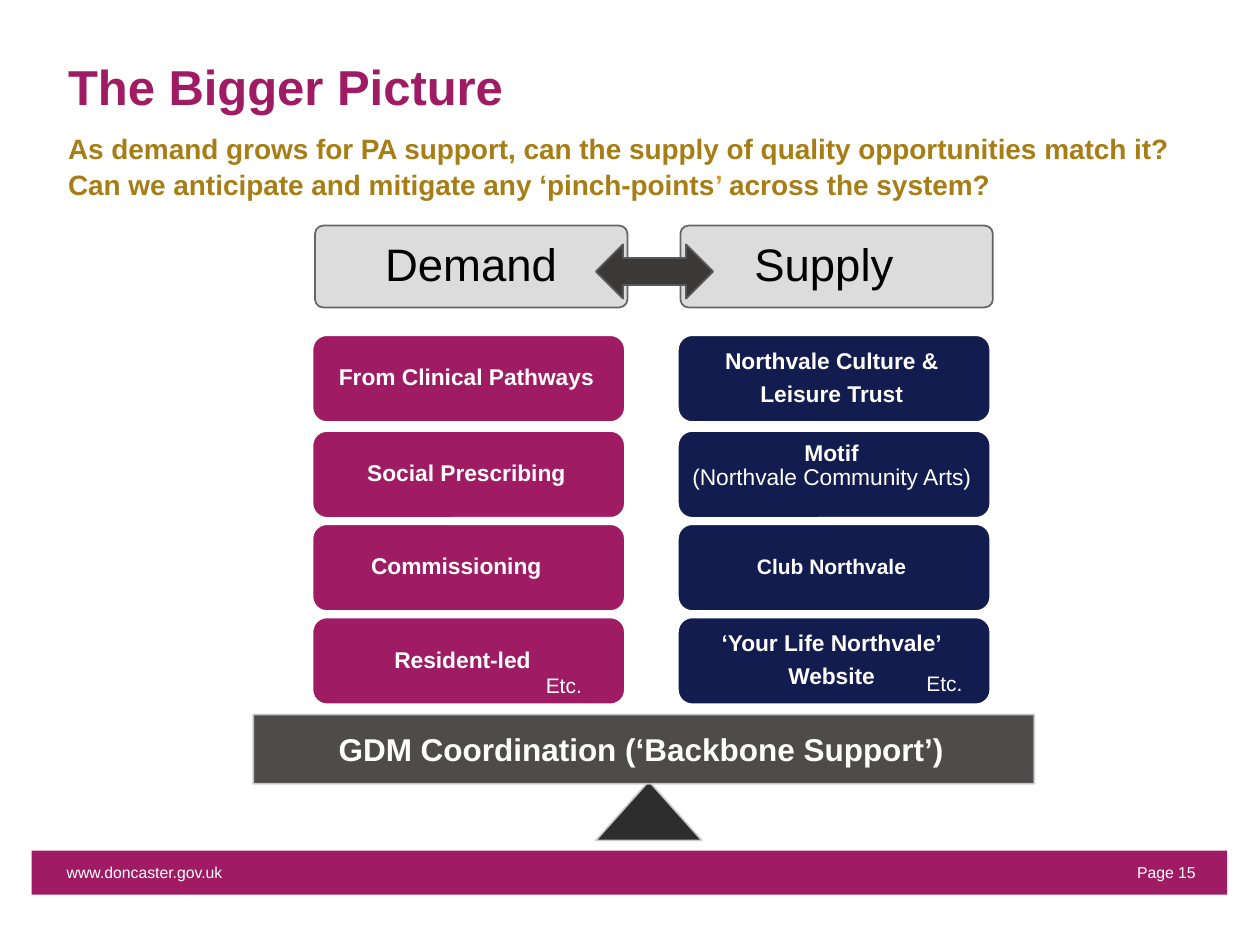
from lxml.etree import SubElement
from pptx import Presentation
from pptx.dml.color import RGBColor
from pptx.enum.shapes import MSO_SHAPE as Shape
from pptx.enum.text import MSO_ANCHOR as Anchor, MSO_AUTO_SIZE as AutoSize, PP_ALIGN as Align
from pptx.oxml.ns import qn
from pptx.util import Inches, Pt

MAGENTA = RGBColor(0x9F, 0x1C, 0x64)
NAVY = RGBColor(0x13, 0x1C, 0x4E)
GOLD = RGBColor(0xA7, 0x7D, 0x15)
AMBER = RGBColor(0xD8, 0x9A, 0x28)
SILVER = RGBColor(0xD9, 0xD9, 0xD9)
PALE = RGBColor(0xCC, 0xCD, 0xD0)
SLATE = RGBColor(0x56, 0x57, 0x59)
CHARCOAL = RGBColor(0x3B, 0x38, 0x38)
INK = RGBColor(0x18, 0x17, 0x17)
BLACK = RGBColor(0, 0, 0)
WHITE = RGBColor(0xFF, 0xFF, 0xFF)

# Content: a line is a list of (text, format changes)
TITLE = "The Bigger Picture"
QUESTIONS = [
    [("As demand grows for PA support, can the supply of quality opportunities match it?", {})],
    [("Can we anticipate and mitigate any ‘pinch-points", {}), ("’ ", {"color": AMBER}),
     ("across the system?", {})],
]
# Each card: lines, then how far its text sits left of centre, then format changes
COLUMNS = [
    {"heading": "Demand", "heading_shift": 0, "left": 2.48, "fill": MAGENTA, "etc": (4.22, 5.33),
     "cards": [
         ([[("From Clinical Pathways", {})]], 0.02, {}),
         ([[("Social Prescribing", {})]], 0.02, {}),
         ([[("Commissioning", {})]], 0.1, {}),
         ([[("Resident-led", {})]], 0.05, {}),
     ]},
    {"heading": "Supply", "heading_shift": 0.1, "left": 5.38, "fill": NAVY, "etc": (7.24, 5.31),
     "cards": [
         ([[("Northvale Culture &", {})], [("Leisure Trust", {})]], 0.02, {}),
         ([[("Motif", {})], [("(Northvale Community Arts)", {"bold": False})]], 0.02,
          {"anchor": Anchor.TOP, "gap": 0}),
         ([[("Club Northvale", {})]], 0.02, {"size": 12}),
         ([[("‘Your Life Northvale’", {})], [("Website", {})]], 0.02, {}),
     ]},
]
BACKBONE = "GDM Coordination (‘Backbone Support’)"
WEBSITE = "www.doncaster.gov.uk"
PAGE = "Page 15"

# Layout
CARD_W, CARD_H = 2.48, 0.69
CARD_TOPS = [2.66, 3.42, 4.16, 4.9]
HEADING_TOP, HEADING_H = 1.79, 0.65
HEADING_OFFSET = 0.02


def write(shape, lines, size, color=WHITE, bold=False, align=Align.CENTER,
          anchor=Anchor.MIDDLE, inset=0, shift=0, spacing=1, gap=0):
    frame = shape.text_frame
    margins = {"margin_left": inset, "margin_top": inset,
               "margin_right": inset + 2 * shift, "margin_bottom": inset}
    for side, inches in margins.items():
        setattr(frame, side, Inches(inches))
    frame.word_wrap = True
    frame.auto_size = AutoSize.NONE
    frame.vertical_anchor = anchor
    for number, line in enumerate(lines):
        paragraph = frame.add_paragraph() if number else frame.paragraphs[0]
        paragraph.alignment = align
        paragraph.line_spacing = spacing
        paragraph.space_before = Pt(gap if number else 0)
        for text, changes in line:
            run = paragraph.add_run()
            run.text = text
            look = {"name": "Arial", "size": Pt(size), "bold": bold, "color": color} | changes
            run.font.color.rgb = look.pop("color")
            for name, value in look.items():
                setattr(run.font, name, value)


def draw(slide, kind, box, fill=None, line=None, alpha=None):
    shape = slide.shapes.add_shape(kind, *map(Inches, box))
    shape.shadow.inherit = False
    for part, color in ((shape.fill, fill), (shape.line.fill, line)):
        if color is None:
            part.background()
        else:
            part.solid()
            part.fore_color.rgb = color
    if line is not None:
        shape.line.width = Pt(1)
    if alpha:
        for color in shape.fill._xPr.iter(qn("a:srgbClr")):
            SubElement(color, qn("a:alpha"), val=str(alpha * 1000))
    return shape


def label(slide, box, lines, size, **looks):
    write(slide.shapes.add_textbox(*map(Inches, box)), lines, size, **looks)


def add_column(slide, column):
    left = column["left"]
    heading = draw(slide, Shape.ROUNDED_RECTANGLE,
                   (left + HEADING_OFFSET, HEADING_TOP, CARD_W, HEADING_H), SILVER, SLATE, 90)
    heading.adjustments[0] = 0.1
    write(heading, [[(column["heading"], {})]], 26, color=BLACK, inset=0.05,
          shift=column["heading_shift"], spacing=0.9)
    for top, (lines, shift, changes) in zip(CARD_TOPS, column["cards"]):
        card = draw(slide, Shape.ROUNDED_RECTANGLE, (left, top, CARD_W, CARD_H),
                    column["fill"], WHITE)
        looks = {"size": 13, "bold": True, "inset": 0.05, "spacing": 0.9, "gap": 4.55}
        write(card, lines, shift=shift, **(looks | changes))
    etc = draw(slide, Shape.ROUNDED_RECTANGLE, (*column["etc"], 0.51, 0.22), column["fill"])
    write(etc, [[("Etc.", {})]], 12)


def main():
    deck = Presentation()
    deck.slide_width, deck.slide_height = Inches(10), Inches(7.5)
    slide = deck.slides.add_slide(deck.slide_layouts[5])

    # Footer
    draw(slide, Shape.RECTANGLE, (0.25, 6.75, 9.49, 0.35), MAGENTA)
    label(slide, (0.53, 6.87, 1.4, 0.11), [[(WEBSITE, {})]], 9, align=Align.LEFT)
    label(slide, (7.24, 6.81, 2.25, 0.22), [[(PAGE, {})]], 9, align=Align.RIGHT)

    # Title and questions
    title = slide.shapes.title
    place = {"left": 0.54, "top": 0.52, "width": 7.75, "height": 0.54}
    for name, inches in place.items():
        setattr(title, name, Inches(inches))
    heading_looks = {"bold": True, "align": Align.LEFT, "anchor": Anchor.TOP}
    write(title, [[(TITLE, {})]], 28, color=MAGENTA, spacing=0.85, **heading_looks)
    label(slide, (0.54, 1.06, 9.26, 0.61), QUESTIONS, 16, color=GOLD, spacing=0.95,
          gap=2.5, **heading_looks)

    # Balance: pivot and beam
    draw(slide, Shape.ISOSCELES_TRIANGLE, (4.73, 6.2, 0.84, 0.47), INK, PALE, 90)
    beam = draw(slide, Shape.RECTANGLE, (2.01, 5.67, 6.2, 0.55), CHARCOAL, PALE, 90)
    write(beam, [[(BACKBONE, {})]], 18, bold=True, shift=0.02)

    # Demand and supply, linked by the arrow
    for column in COLUMNS:
        add_column(slide, column)
    draw(slide, Shape.LEFT_RIGHT_ARROW, (4.73, 1.94, 0.93, 0.43), CHARCOAL, SLATE)

    deck.save("out.pptx")


if __name__ == "__main__":
    main()
